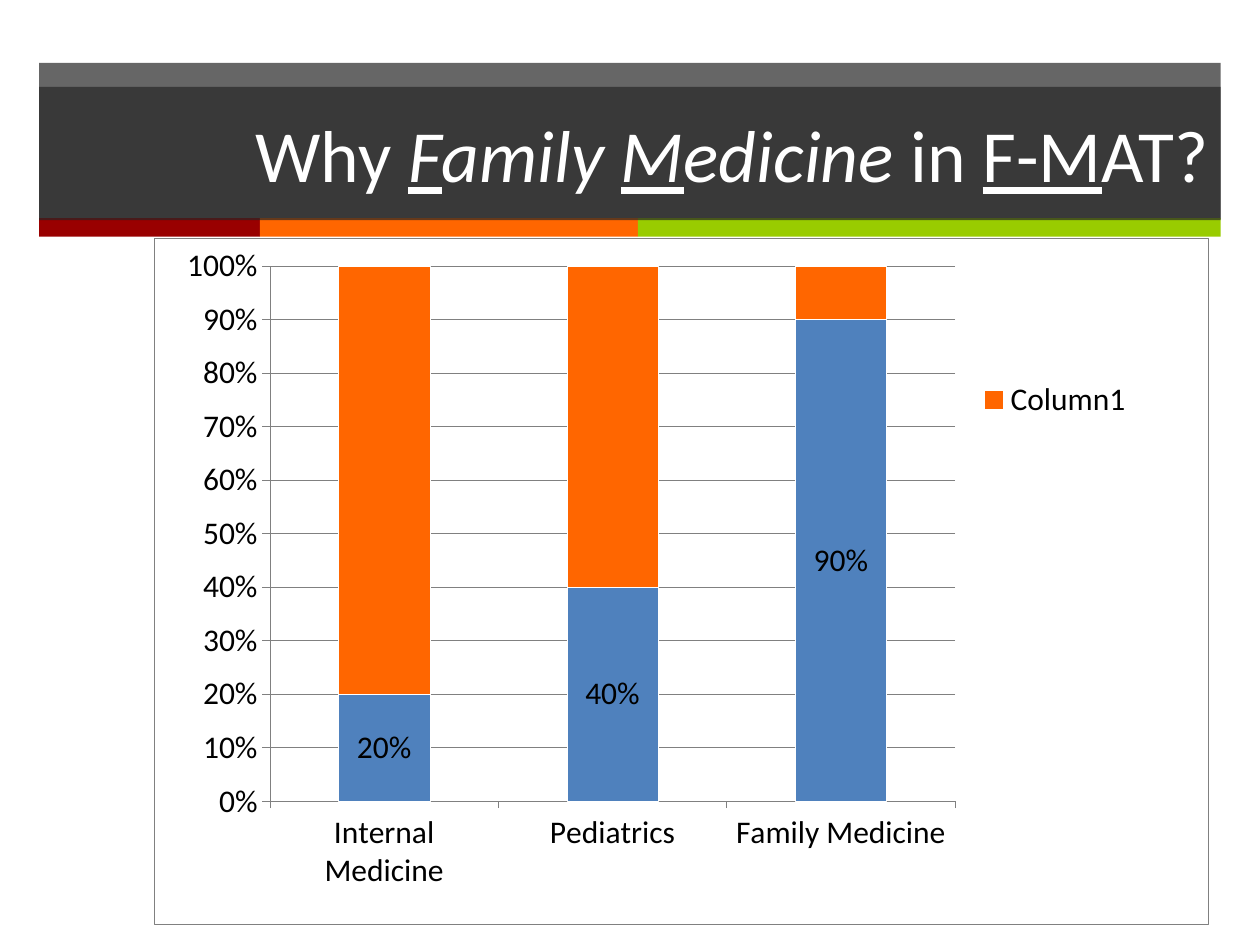
from lxml import etree
from pptx import Presentation
from pptx.chart.data import CategoryChartData
from pptx.dml.color import RGBColor
from pptx.enum import chart as ch, shapes, text
from pptx.oxml import parse_xml
from pptx.oxml.ns import nsdecls, qn
from pptx.util import Cm, Pt

DARK = RGBColor(0x26, 0x26, 0x26)
RED = RGBColor(0x99, 0x00, 0x00)
ORANGE = RGBColor(0xFF, 0x66, 0x00)
GREEN = RGBColor(0x99, 0xCC, 0x00)
BLUE = RGBColor(0x4F, 0x81, 0xBD)
GRAY = RGBColor(0x80, 0x80, 0x80)
WHITE = RGBColor(0xFF, 0xFF, 0xFF)
BLACK = RGBColor(0, 0, 0)
FONT = "Calibri"
LEFT, WIDE = 0.79, 23.82

# wording, italic, underlined
TITLE = [
    ("Why ", False, False),
    ("F", True, True),
    ("amily ", True, False),
    ("M", True, True),
    ("edicine ", True, False),
    ("in ", False, False),
    ("F-M", False, True),
    ("AT?", False, False),
]


def add_bar(slide, x, y, w, h, color, alpha=None):
    bar = slide.shapes.add_shape(
        shapes.MSO_SHAPE.RECTANGLE, Cm(x), Cm(y), Cm(w), Cm(h))
    bar.shadow.inherit = False
    bar.fill.solid()
    bar.fill.fore_color.rgb = color
    bar.line.fill.background()
    if alpha:
        tone = bar.fill._xPr.find(".//" + qn("a:srgbClr"))
        etree.SubElement(tone, qn("a:alpha"), val=str(alpha * 1000))
    return bar


def add_title(slide):
    frame = add_bar(slide, LEFT, 1.75, WIDE, 2.69, DARK, 70).text_frame
    frame.word_wrap = True
    frame.vertical_anchor = text.MSO_ANCHOR.MIDDLE
    line = frame.paragraphs[0]
    line.alignment = text.PP_ALIGN.RIGHT
    for words, slant, under in TITLE:
        run = line.add_run()
        run.text = words
        font = run.font
        font.name, font.size = FONT, Pt(42)
        font.color.rgb = WHITE
        font.italic, font.underline = slant, under


def set_line(line, color):
    line.color.rgb = color
    line.width = Pt(0.25)


def make_layout(x, y, w, h, inner=False):
    target = '<c:layoutTarget val="inner"/>' if inner else ""
    sizes = "".join(f'<c:{k} val="{v}"/>' for k, v in zip("xywh", (x, y, w, h)))
    return parse_xml(
        f'<c:layout {nsdecls("c")}><c:manualLayout>{target}'
        '<c:xMode val="edge"/><c:yMode val="edge"/>'
        f'{sizes}</c:manualLayout></c:layout>')


def make_frame(border=None):
    line = (f'<a:ln w="3175"><a:solidFill><a:srgbClr val="{border}"/>'
            '</a:solidFill></a:ln>') if border else ""
    return parse_xml(
        f'<c:spPr {nsdecls("c", "a")}><a:solidFill><a:srgbClr val="{WHITE}"/>'
        f'</a:solidFill>{line}</c:spPr>')


def style_axes(chart):
    for axis in (chart.category_axis, chart.value_axis):
        axis.major_tick_mark = ch.XL_TICK_MARK.OUTSIDE
        set_line(axis.format.line, GRAY)
    axis = chart.value_axis
    axis.minimum_scale, axis.maximum_scale, axis.major_unit = 0, 1, 0.1
    axis.has_major_gridlines = True
    set_line(axis.major_gridlines.format.line, GRAY)
    axis.tick_labels.number_format = "0%"
    axis.tick_labels.number_format_is_linked = False


def style_bars(plot):
    plot.gap_width, plot.overlap = 150, 100
    for row, color in zip(plot.series, (BLUE, ORANGE)):
        row.format.fill.solid()
        row.format.fill.fore_color.rgb = color
        set_line(row.format.line, WHITE)
    tags = plot.series[0].data_labels
    tags.show_value = True
    tags.number_format = "0%"
    tags.number_format_is_linked = False


def add_legend(chart):
    """Place the legend at the right, with the first series left out."""
    chart.has_legend = True
    chart.legend.position = ch.XL_LEGEND_POSITION.RIGHT
    chart.legend.include_in_layout = False
    entry = parse_xml(
        f'<c:legendEntry {nsdecls("c")}><c:idx val="0"/>'
        '<c:delete val="1"/></c:legendEntry>')
    root = chart.legend._element
    for old in root.findall(qn("c:layout")):
        root.remove(old)
    spot = root.find(qn("c:legendPos"))
    spot.addnext(entry)
    entry.addnext(make_layout(0.78, 0.2, 0.15, 0.07))


def add_chart(slide):
    data = CategoryChartData(number_format="0%")
    data.categories = ["Internal Medicine", "Pediatrics", "Family Medicine"]
    data.add_series("Series 1", (0.2, 0.4, 0.9))
    data.add_series("Column1", (0.8, 0.6, 0.1))
    chart = slide.shapes.add_chart(
        ch.XL_CHART_TYPE.COLUMN_STACKED_100,
        Cm(3.1), Cm(4.8), Cm(21.26), Cm(13.84), data).chart
    chart.has_title = False
    chart.font.name, chart.font.size = FONT, Pt(18)
    chart.font.color.rgb = BLACK
    style_axes(chart)
    style_bars(chart.plots[0])
    add_legend(chart)
    root = chart._chartSpace
    area = root.find(".//" + qn("c:plotArea"))
    for old in area.findall(qn("c:layout")):
        area.remove(old)
    area.insert(0, make_layout(0.11, 0.04, 0.65, 0.78, inner=True))
    area.append(make_frame())
    root.find(qn("c:chart")).addnext(make_frame(GRAY))


def main():
    deck = Presentation()
    deck.slide_width, deck.slide_height = Cm(25.4), Cm(19.05)
    slide = deck.slides.add_slide(deck.slide_layouts[6])
    add_bar(slide, LEFT, 1.27, WIDE, 3.15, DARK, 70)
    x = LEFT
    for w, color in ((4.45, RED), (7.62, ORANGE), (11.75, GREEN)):
        add_bar(slide, x, 4.4, w, 0.37, color)
        x += w
    add_title(slide)
    add_chart(slide)
    deck.save("out.pptx")


if __name__ == "__main__":
    main()
